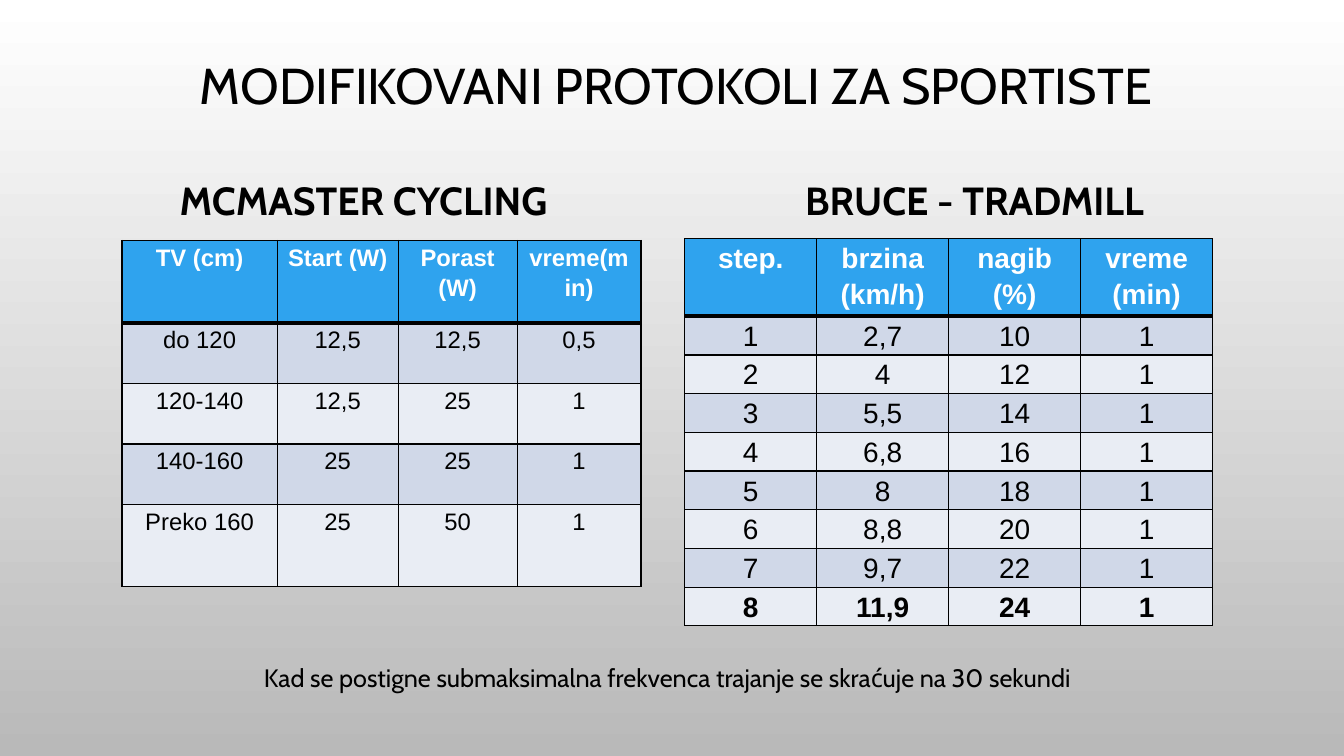
import pptx
import pptx.dml.color
import pptx.enum.text
import pptx.oxml
import pptx.oxml.ns
import pptx.util

BLACK = pptx.dml.color.RGBColor(0x00, 0x00, 0x00)
WHITE = pptx.dml.color.RGBColor(0xFF, 0xFF, 0xFF)
GREY = pptx.dml.color.RGBColor(0xB9, 0xB9, 0xB9)
HEADER_BLUE = pptx.dml.color.RGBColor(0x2F, 0xA3, 0xEE)
BAND_DARK = pptx.dml.color.RGBColor(0xD0, 0xD8, 0xE8)
BAND_LIGHT = pptx.dml.color.RGBColor(0xE9, 0xED, 0xF4)

ANCHOR = pptx.enum.text.MSO_ANCHOR
AUTO_SIZE = pptx.enum.text.MSO_AUTO_SIZE


def write_text(frame, text, size, font="Cabin", color=BLACK, bold=False,
               line_spacing=1.0):
    """Write one centred paragraph into a text frame."""
    frame.word_wrap = True
    paragraph = frame.paragraphs[0]
    paragraph.text = text
    paragraph.alignment = pptx.enum.text.PP_ALIGN.CENTER
    paragraph.line_spacing = line_spacing
    paragraph.font.name = font
    paragraph.font.size = pptx.util.Pt(size)
    paragraph.font.bold = bold
    paragraph.font.color.rgb = color


class ProtocolSlide:
    """Title-only slide laid out on a grid of 100 columns by 100 rows."""

    def __init__(self, presentation):
        self.column = presentation.slide_width / 100
        self.row = presentation.slide_height / 100
        self.slide = presentation.slides.add_slide(presentation.slide_layouts[5])

    def across(self, columns):
        return round(columns * self.column)

    def down(self, rows):
        return round(rows * self.row)

    def box(self, left, top, width, height):
        return (self.across(left), self.down(top),
                self.across(width), self.down(height))

    def background(self, top_color, bottom_color):
        fill = self.slide.background.fill
        fill.gradient()
        fill.gradient_angle = 270
        for stop, color, position in zip(
                fill.gradient_stops, (top_color, bottom_color), (0, 1)):
            stop.color.rgb = color
            stop.position = position

    def title(self, text, *place):
        shape = self.slide.shapes.title
        shape.left, shape.top, shape.width, shape.height = self.box(*place)
        shape.text_frame.auto_size = AUTO_SIZE.NONE
        shape.text_frame.vertical_anchor = ANCHOR.MIDDLE
        write_text(shape.text_frame, text, 36, line_spacing=0.9)

    def heading(self, text, *place):
        frame = self.slide.shapes.add_textbox(*self.box(*place)).text_frame
        frame.vertical_anchor = ANCHOR.BOTTOM
        write_text(frame, text, 28, bold=True, line_spacing=1.2)

    def note(self, text, *place):
        frame = self.slide.shapes.add_textbox(*self.box(*place)).text_frame
        frame.margin_left = frame.margin_right = pptx.util.Inches(0.13)
        frame.margin_top = frame.margin_bottom = pptx.util.Inches(0.07)
        write_text(frame, text, 18)
        frame.auto_size = AUTO_SIZE.SHAPE_TO_FIT_TEXT

    def borders(self, cell, **widths):
        """Draw black cell borders; widths are points for L, R, T and B."""
        properties = cell._tc.get_or_add_tcPr()
        for index, (side, width) in enumerate(widths.items()):
            line = pptx.oxml.parse_xml(
                f'<a:ln{side} {pptx.oxml.ns.nsdecls("a")} '
                f'w="{pptx.util.Pt(width)}"><a:solidFill>'
                f'<a:srgbClr val="{BLACK}"/></a:solidFill></a:ln{side}>')
            properties.insert(index, line)

    def table(self, values, left, top, widths, heights, size, bold_rows=(0,)):
        table = self.slide.shapes.add_table(
            len(heights), len(widths),
            *self.box(left, top, sum(widths), sum(heights))).table
        for column, width in zip(table.columns, widths):
            column.width = self.across(width)
        for row, height in zip(table.rows, heights):
            row.height = self.down(height)
        for number, row_values in enumerate(values):
            band = BAND_DARK if number % 2 else BAND_LIGHT
            for index, value in enumerate(row_values):
                cell = table.cell(number, index)
                cell.margin_left = cell.margin_right = pptx.util.Inches(0.1)
                cell.margin_top = cell.margin_bottom = 0
                cell.fill.solid()
                cell.fill.fore_color.rgb = band if number else HEADER_BLUE
                write_text(cell.text_frame, value, size, font="Arial",
                           color=BLACK if number else WHITE,
                           bold=number in bold_rows, line_spacing=1.15)
                self.borders(cell, L=1, R=1, T=3 if number == 1 else 1,
                             B=1 if number else 3)


def main():
    presentation = pptx.Presentation()
    presentation.slide_width = pptx.util.Inches(13.33)
    presentation.slide_height = pptx.util.Inches(7.5)
    slide = ProtocolSlide(presentation)

    # Background and title
    slide.background(WHITE, GREY)
    slide.title("MODIFIKOVANI PROTOKOLI ZA SPORTISTE", 7.8, 0, 85, 23.33)

    # Cycling protocol
    slide.heading("MCMASTER CYCLING", 4.95, 20.93, 44.18, 9.33)
    cycling = [
        ("TV (cm)", "Start (W)", "Porast (W)", "vreme(min)"),
        ("do 120", "12,5", "12,5", "0,5"),
        ("120-140", "12,5", "25", "1"),
        ("140-160", "25", "25", "1"),
        ("Preko 160", "25", "50", "1"),
    ]
    slide.table(cycling, 9.08, 31.8, widths=(11.55, 9, 8.85, 9.22),
                heights=(10.93, 8, 8, 8, 10.8), size=17)

    # Treadmill protocol: every step lasts one minute, slope grows by two
    slide.heading("BRUCE - TRADMILL", 50.4, 20.93, 44.18, 9.33)
    speeds = ("2,7", "4", "5,5", "6,8", "8", "8,8", "9,7", "11,9")
    treadmill = [("step.", "brzina (km/h)", "nagib (%)", "vreme (min)")]
    treadmill += [(str(step), speed, str(8 + 2 * step), "1")
                  for step, speed in enumerate(speeds, start=1)]
    slide.table(treadmill, 50.95, 31.6, widths=[9.82] * 4,
                heights=[9.73] + [4.9] * len(speeds), size=20,
                bold_rows=(0, len(speeds)))

    # Closing note
    slide.note("Kad se postigne submaksimalna frekvenca trajanje se skraćuje "
               "na 30 sekundi", 8.4, 86.67, 82.5, 5.87)

    presentation.save("out.pptx")


if __name__ == "__main__":
    main()
